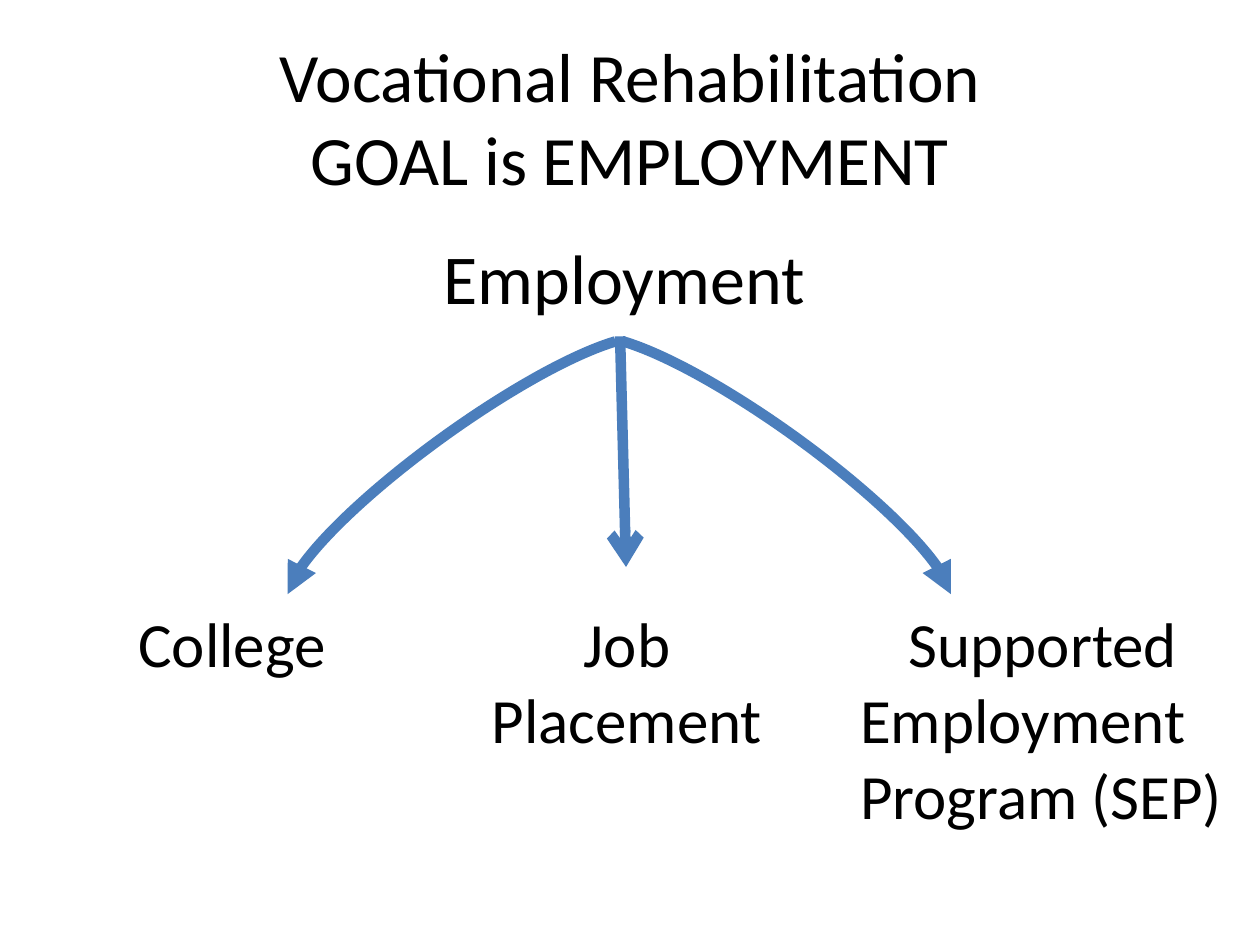
import pptx
import pptx.dml.color
import pptx.enum.shapes
import pptx.enum.text
import pptx.oxml
import pptx.oxml.ns
import pptx.util
from pptx.util import Cm

BLACK = pptx.dml.color.RGBColor(0x00, 0x00, 0x00)
BLUE = pptx.dml.color.RGBColor(0x4B, 0x7E, 0xBC)
LEFT = pptx.enum.text.PP_ALIGN.LEFT
CENTER = pptx.enum.text.PP_ALIGN.CENTER
TOP = pptx.enum.text.MSO_ANCHOR.TOP
MIDDLE = pptx.enum.text.MSO_ANCHOR.MIDDLE
NO_RESIZE = pptx.enum.text.MSO_AUTO_SIZE.NONE
RESIZE = pptx.enum.text.MSO_AUTO_SIZE.SHAPE_TO_FIT_TEXT


def set_attributes(target, values):
    for name, value in values.items():
        setattr(target, name, value)


def add_text(slide, box, lines, size, title=False):
    shape = slide.shapes.add_textbox(*map(Cm, box))
    frame = shape.text_frame
    set_attributes(frame, {
        "word_wrap": title,
        "auto_size": NO_RESIZE if title else RESIZE,
        "vertical_anchor": MIDDLE if title else TOP,
    })
    for index, (text, alignment) in enumerate(lines):
        paragraph = frame.add_paragraph() if index else frame.paragraphs[0]
        set_attributes(paragraph, {"text": text, "alignment": alignment})
        for run in paragraph.runs:
            set_attributes(run.font, {"name": "Calibri", "size": pptx.util.Pt(size)})
            run.font.color.rgb = BLACK


def style_line(shape, end, arrowhead):
    shape.line.color.rgb = BLUE
    shape.line.width = pptx.util.Pt(6)
    properties = shape._element.spPr
    line = properties.find(pptx.oxml.ns.qn("a:ln"))
    line.append(pptx.oxml.parse_xml(
        f'<a:{end} {pptx.oxml.ns.nsdecls("a")} type="{arrowhead}"/>'))


def add_straight_arrow(slide, start, finish):
    kind = pptx.enum.shapes.MSO_CONNECTOR.STRAIGHT
    connector = slide.shapes.add_connector(kind, *map(Cm, start + finish))
    style_line(connector, "tailEnd", "arrow")
    connector._element.spPr.append(pptx.oxml.parse_xml(
        f'<a:effectLst {pptx.oxml.ns.nsdecls("a")}/>'))


def add_arc_arrow(slide, left, rotation, flipped):
    kind = pptx.enum.shapes.MSO_SHAPE.ARC
    arc = slide.shapes.add_shape(kind, Cm(left), Cm(8.61), Cm(9.07), Cm(1.88))
    arc.adjustments[0] = 109.53
    arc.adjustments[1] = 211.82
    arc.rotation = rotation
    arc.shadow.inherit = False
    arc.fill.background()
    if flipped:
        arc._element.spPr.xfrm.set("flipH", "1")
    style_line(arc, "headEnd", "triangle")


def main():
    presentation = pptx.Presentation()
    presentation.slide_width = Cm(25.4)
    presentation.slide_height = Cm(19.05)
    slide = presentation.slides.add_slide(presentation.slide_layouts[6])

    title = "Vocational Rehabilitation\vGOAL is EMPLOYMENT"
    add_text(slide, (1.27, 0.76, 22.86, 3.18), [(title, CENTER)], 39.6, title=True)
    add_text(slide, (8.69, 4.6, 7.87, 1.96), [("Employment", LEFT)], 40)

    paths = [
        (2.54, 4.34, 1.8, [("College", LEFT)]),
        (9.63, 6.02, 3.33, [("Job", CENTER), ("Placement", CENTER)]),
        (17.09, 7.87, 4.88,
         [("Supported", CENTER), ("Employment", LEFT), ("Program (SEP)", LEFT)]),
    ]
    for left, width, height, lines in paths:
        add_text(slide, (left, 12.07, width, height), lines, 36)

    add_straight_arrow(slide, (12.5, 6.78), (12.62, 11.43))
    add_arc_arrow(slide, 4.98, 324.3, False)
    add_arc_arrow(slide, 10.92, 35.7, True)
    presentation.save("out.pptx")


if __name__ == "__main__":
    main()
